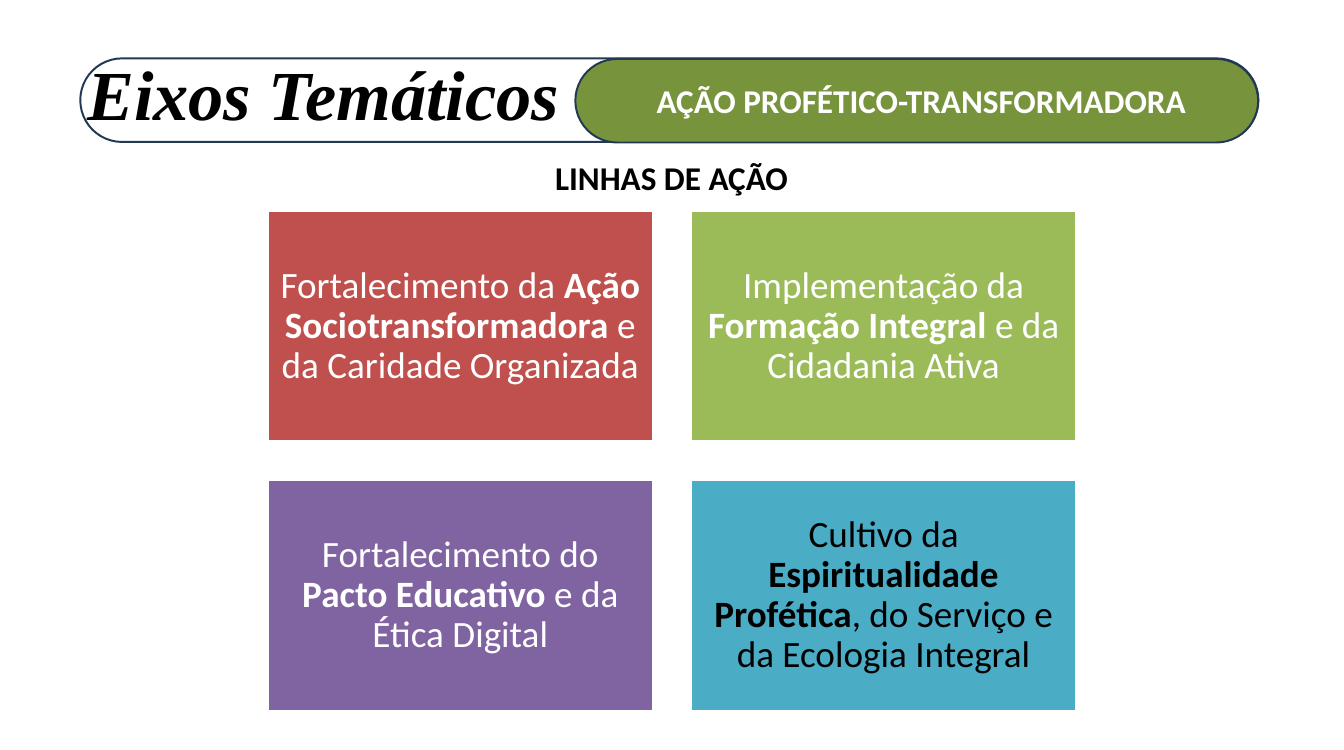
from dataclasses import dataclass

from pptx import Presentation
from pptx.dml.color import RGBColor
from pptx.enum.shapes import MSO_SHAPE
from pptx.enum.text import MSO_ANCHOR, PP_ALIGN
from pptx.util import Cm, Pt


@dataclass(frozen=True)
class Theme:
    body_font: str = "Calibri"
    title_font: str = "Times New Roman"
    title_size: int = 72
    heading_size: int = 34
    card_size: int = 38
    line_width: int = 2
    black: str = "000000"
    white: str = "FFFFFF"
    outline: str = "233953"
    pill: str = "77933C"
    red: str = "C0504D"
    green: str = "9BBB59"
    purple: str = "8064A2"
    blue: str = "4BACC6"


class SlideBuilder:
    def __init__(self, slide, theme):
        self.slide = slide
        self.theme = theme

    def add_run(self, paragraph, text, size, color, bold=True, italic=False, font_name=None):
        run = paragraph.add_run()
        run.text = text
        run.font.name = font_name or self.theme.body_font
        run.font.size = Pt(size)
        run.font.bold = bold
        run.font.italic = italic
        run.font.color.rgb = RGBColor.from_string(color)

    def add_box(self, kind, left, top, width, height, line, fill=None):
        shape = self.slide.shapes.add_shape(kind, Cm(left), Cm(top), Cm(width), Cm(height))
        shape.shadow.inherit = False
        if fill:
            shape.fill.solid()
            shape.fill.fore_color.rgb = RGBColor.from_string(fill)
        else:
            shape.fill.background()
        shape.line.color.rgb = RGBColor.from_string(line)
        shape.line.width = Pt(self.theme.line_width)
        return shape

    def add_pill(self, left, top, width, height, fill=None):
        shape = self.add_box(MSO_SHAPE.ROUNDED_RECTANGLE, left, top, width, height,
                             self.theme.outline, fill)
        shape.adjustments[0] = 0.5

    def add_label(self, left, top, width, height, text, size, color,
                  alignment=PP_ALIGN.CENTER, **style):
        text_box = self.slide.shapes.add_textbox(Cm(left), Cm(top), Cm(width), Cm(height))
        text_box.text_frame.word_wrap = True
        paragraph = text_box.text_frame.paragraphs[0]
        paragraph.alignment = alignment
        self.add_run(paragraph, text, size, color, **style)

    def add_card(self, left, top, width, height, fill, color, pieces):
        shape = self.add_box(MSO_SHAPE.RECTANGLE, left, top, width, height,
                             self.theme.white, fill)
        frame = shape.text_frame
        frame.word_wrap = True
        frame.vertical_anchor = MSO_ANCHOR.MIDDLE
        frame.margin_left = frame.margin_right = Cm(0.41)
        frame.margin_top = frame.margin_bottom = Cm(0.41)
        paragraph = frame.paragraphs[0]
        paragraph.alignment = PP_ALIGN.CENTER
        paragraph.line_spacing = 0.9
        # The middle piece of each card is the emphasised one
        for index, text in enumerate(pieces):
            self.add_run(paragraph, text, self.theme.card_size, color, bold=index == 1)


def main():
    theme = Theme()
    presentation = Presentation()
    presentation.slide_width = Cm(48.54)
    presentation.slide_height = Cm(27.1)
    slide = presentation.slides.add_slide(presentation.slide_layouts[6])
    builder = SlideBuilder(slide, theme)

    # Title banner
    builder.add_pill(2.9, 2.11, 42.55, 3.02)
    builder.add_label(2.9, 1.7, 43.23, 3.07, "Eixos Temáticos", theme.title_size, theme.black,
                      alignment=PP_ALIGN.LEFT, italic=True, font_name=theme.title_font)

    # Thematic axis and section heading
    builder.add_pill(20.78, 2.13, 24.66, 3.02, theme.pill)
    builder.add_label(21.11, 2.77, 24.33, 1.7, "AÇÃO PROFÉTICO-TRANSFORMADORA",
                      theme.heading_size, theme.white)
    builder.add_label(12.09, 5.56, 24.33, 1.7, "LINHAS DE AÇÃO",
                      theme.heading_size, theme.black)

    # Lines of action in a two-column grid
    cards = [
        (theme.red, theme.white,
         ("Fortalecimento da ", "Ação Sociotransformadora ", "e da Caridade Organizada")),
        (theme.green, theme.white,
         ("Implementação da ", "Formação Integral ", "e da Cidadania Ativa")),
        (theme.purple, theme.white,
         ("Fortalecimento do ", "Pacto Educativo ", "e da Ética Digital")),
        (theme.blue, theme.black,
         ("Cultivo da ", "Espiritualidade Profética", ", do Serviço e da Ecologia Integral")),
    ]
    grid_left, grid_top, card_width, card_height, gap = 9.68, 7.62, 13.89, 8.33, 1.4
    for index, (fill, color, pieces) in enumerate(cards):
        row, column = divmod(index, 2)
        builder.add_card(grid_left + column * (card_width + gap),
                         grid_top + row * (card_height + gap),
                         card_width, card_height, fill, color, pieces)

    presentation.save("out.pptx")


if __name__ == "__main__":
    main()
